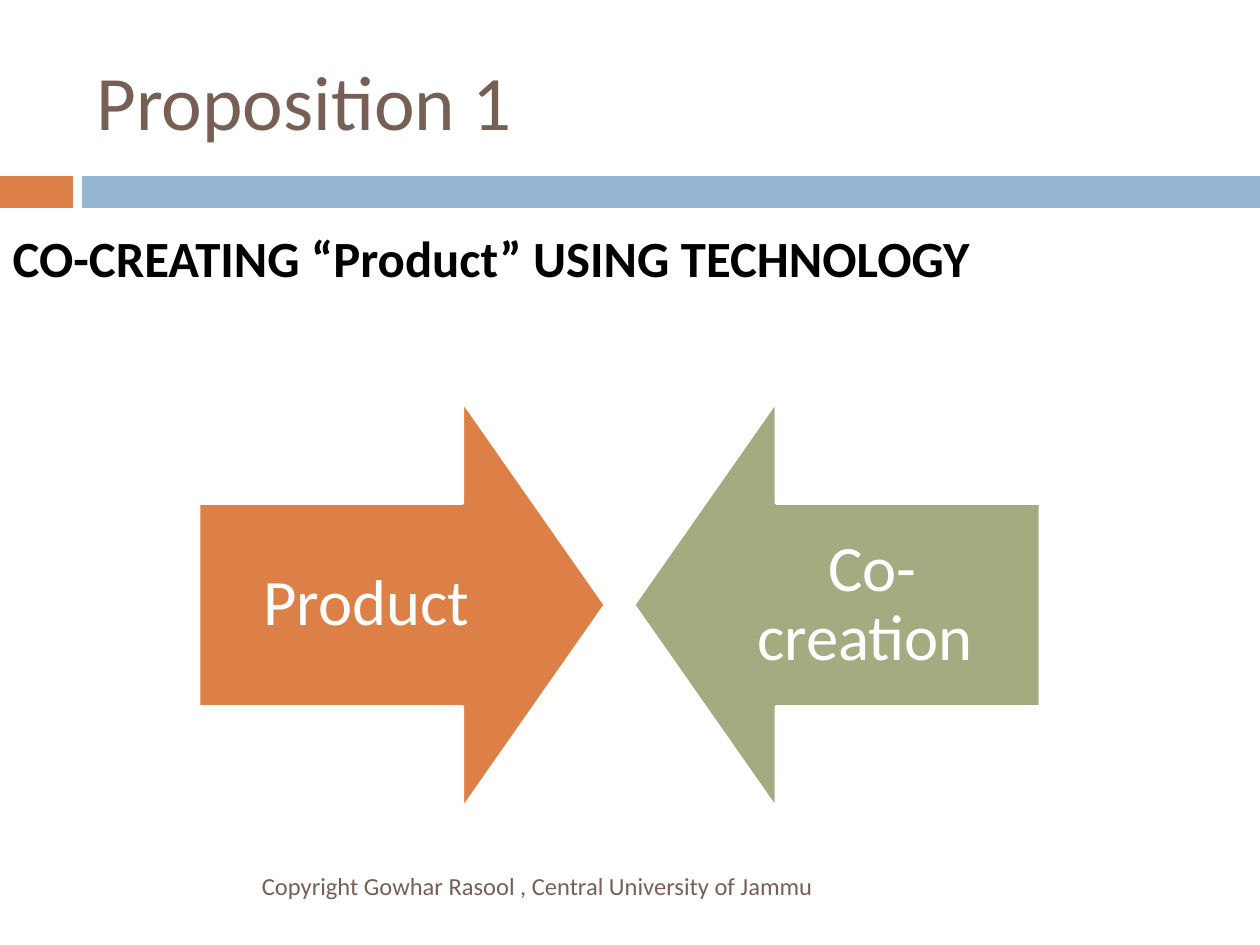
from lxml import etree
from pptx import Presentation
from pptx import util as u
from pptx.dml.color import RGBColor
from pptx.enum import shapes, text
from pptx.oxml.ns import qn

EMU_PER_PX = 914400 / 126
FONT = "Calibri"
BROWN, ORANGE, BLUE, GREEN = "775F55", "DD8047", "94B6D2", "A5AB81"
WHITE, BLACK = "FFFFFF", "000000"


def px(length):
    """Turn a length in px into EMU."""
    return u.Emu(round(length * EMU_PER_PX))


def paint(color_format, color):
    """Apply a hex colour to a colour format."""
    color_format.rgb = RGBColor.from_string(color)


def place(element, left, top, width, height):
    """Move and size an element."""
    element.left, element.top = px(left), px(top)
    element.width, element.height = px(width), px(height)


def write(element, wording, size, color, align, anchor, bold=False):
    """Write one formatted run and return its paragraph."""
    frame = element.text_frame
    frame.word_wrap = True
    frame.auto_size = text.MSO_AUTO_SIZE.NONE
    frame.vertical_anchor = anchor
    paragraph = frame.paragraphs[0]
    paragraph.alignment = align
    run = paragraph.add_run()
    run.text = wording
    run.font.name, run.font.size, run.font.bold = FONT, u.Pt(size), bold
    paint(run.font.color, color)
    return paragraph


def add_filled(slide, preset, box, color):
    """Add a preset shape with a plain fill and no line."""
    figure = slide.shapes.add_shape(preset, *map(px, box))
    figure.shadow.inherit = False
    figure.fill.solid()
    paint(figure.fill.fore_color, color)
    figure.line.fill.background()
    return figure


def add_arrow(slide, preset, left, wording, color):
    """Add a white-edged block arrow with its label."""
    arrow = add_filled(slide, preset, (left, 402, 406, 406), color)
    arrow.adjustments[0], arrow.adjustments[1] = 0.5, 0.35
    arrow.line.width = u.Pt(1.5)
    arrow.line.fill.solid()
    paint(arrow.line.color, WHITE)
    frame = arrow.text_frame
    frame.margin_left = frame.margin_right = px(37)
    frame.margin_top = frame.margin_bottom = px(37)
    label = write(arrow, wording, 37, WHITE, text.PP_ALIGN.CENTER, text.MSO_ANCHOR.MIDDLE)
    label.line_spacing = 0.9


def fill_title(slide):
    """Fill the title placeholder."""
    title = slide.shapes.title
    place(title, 84, 32, 1124, 136)
    write(title, "Proposition 1", 44, BROWN, text.PP_ALIGN.LEFT, text.MSO_ANCHOR.MIDDLE)


def fill_body(slide):
    """Fill the body placeholder with the unbulleted heading."""
    body = slide.placeholders[1]
    place(body, 0, 220, 1218, 630)
    heading = write(body, "CO-CREATING “Product” USING TECHNOLOGY", 29, BLACK,
                    text.PP_ALIGN.LEFT, text.MSO_ANCHOR.TOP, bold=True)
    heading.space_before = u.Pt(7)
    properties = heading._p.get_or_add_pPr()
    properties.set("marL", str(px(44)))
    properties.set("indent", str(px(-44)))
    etree.SubElement(properties, qn("a:buNone"))


def add_footer(slide):
    """Add the copyright line."""
    footer = slide.shapes.add_textbox(*map(px, (84, 861, 747, 50)))
    write(footer, "Copyright Gowhar Rasool , Central University of Jammu ", 14, BROWN,
          text.PP_ALIGN.RIGHT, text.MSO_ANCHOR.MIDDLE)


def main():
    """Build and save the slide."""
    deck = Presentation()
    deck.slide_width, deck.slide_height = px(1260), px(945)
    slide = deck.slides.add_slide(deck.slide_layouts[1])
    preset = shapes.MSO_SHAPE
    add_filled(slide, preset.RECTANGLE, (0, 176, 73, 32), ORANGE)
    add_filled(slide, preset.RECTANGLE, (82, 176, 1178, 32), BLUE)
    fill_title(slide)
    fill_body(slide)
    add_arrow(slide, preset.RIGHT_ARROW, 199, "Product", ORANGE)
    add_arrow(slide, preset.LEFT_ARROW, 634, "Co-creation ", GREEN)
    add_footer(slide)
    deck.save("out.pptx")


if __name__ == "__main__":
    main()
